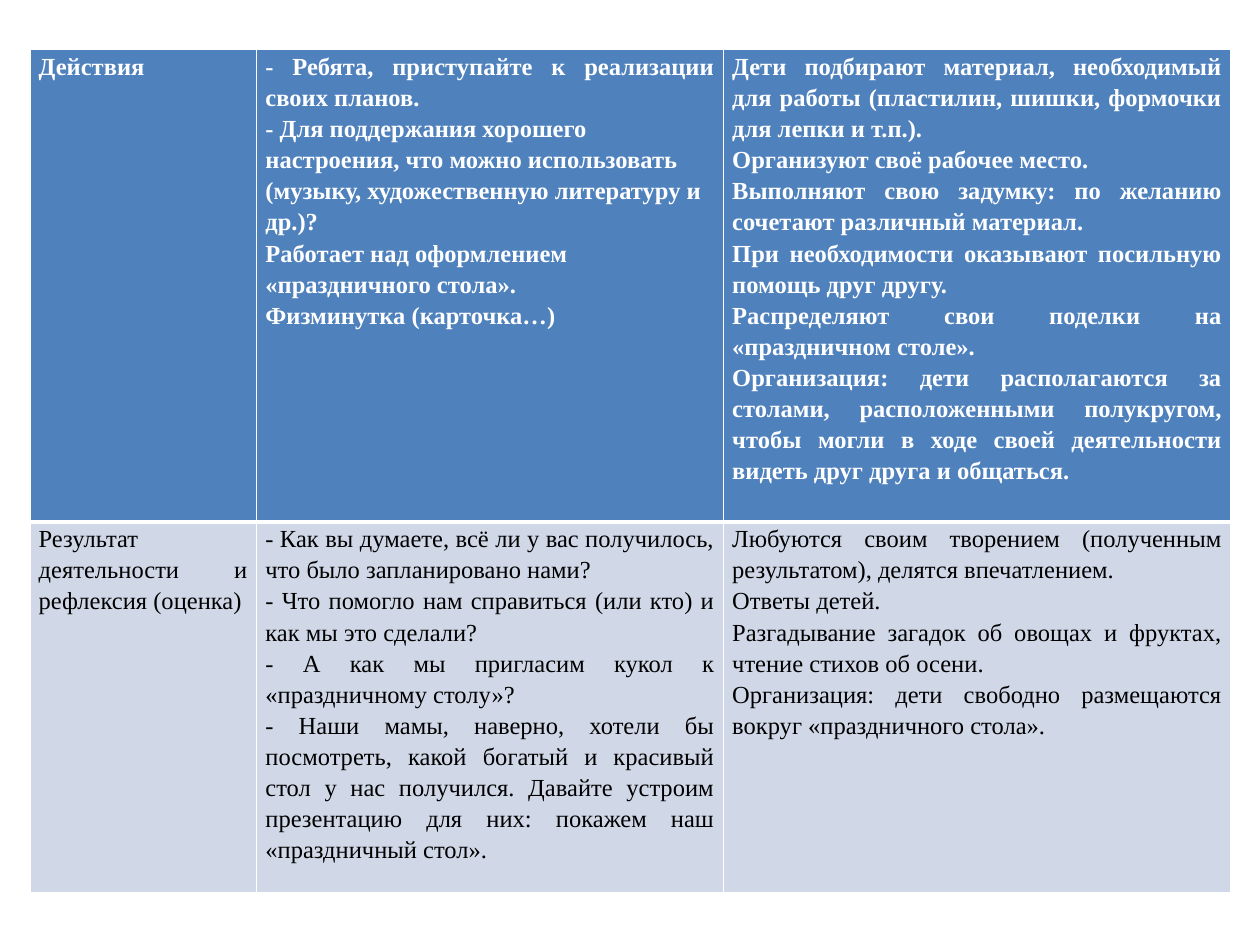
from dataclasses import dataclass

from lxml.etree import SubElement
from pptx import Presentation
from pptx.dml.color import RGBColor
from pptx.enum.text import PP_ALIGN
from pptx.oxml.ns import qn
from pptx.util import Cm, Pt


@dataclass(frozen=True)
class Theme:
    """Colours, type and line sizes of the page."""
    font: str = "Times New Roman"
    size: int = 14
    spacing: float = 1.15
    border: str = "FFFFFF"
    thin: int = 1
    thick: int = 3


@dataclass(frozen=True)
class RowStyle:
    """Look of one table row."""
    fill: str
    ink: str
    bold: bool
    bottom: int


@dataclass(frozen=True)
class CellText:
    """Justified paragraphs followed by left-aligned ones."""
    justified: tuple
    left: tuple = ()


THEME = Theme()
HEADER = RowStyle("4F81BD", "FFFFFF", True, THEME.thick)
BODY = RowStyle("D0D8E8", "000000", False, THEME.thin)
COLUMN_WIDTHS = (4.57, 9.41, 10.23)
ROW_HEIGHTS = (9.52, 7.48)

ACTIONS = (
    CellText(("Действия ",)),
    CellText(
        ("- Ребята, приступайте к реализации своих планов.",),
        (
            "- Для поддержания хорошего настроения, что можно использовать "
            "(музыку, художественную литературу и др.)?",
            "Работает над оформлением «праздничного стола».",
            "Физминутка (карточка…)",
        ),
    ),
    CellText((
        "Дети подбирают материал, необходимый для работы "
        "(пластилин, шишки, формочки для лепки и т.п.).",
        "Организуют своё рабочее место.",
        "Выполняют свою задумку: по желанию сочетают различный материал.",
        "При необходимости оказывают посильную помощь друг другу.",
        "Распределяют свои поделки на «праздничном столе».",
        "Организация: дети располагаются за столами, расположенными полукругом, "
        "чтобы могли в ходе своей деятельности видеть друг друга и общаться.",
    )),
)
RESULTS = (
    CellText(("Результат деятельности и рефлексия (оценка)",)),
    CellText((
        "- Как вы думаете, всё ли у вас получилось, что было запланировано нами?",
        "- Что помогло нам справиться (или кто) и как мы это сделали?",
        "- А как мы пригласим кукол к «праздничному столу»?",
        "- Наши мамы, наверно, хотели бы посмотреть, какой богатый и красивый "
        "стол у нас получился. Давайте устроим презентацию для них: "
        "покажем наш «праздничный стол».",
    )),
    CellText((
        "Любуются своим творением (полученным результатом), делятся впечатлением.",
        "Ответы детей.",
        "Разгадывание загадок об овощах и фруктах, чтение стихов об осени.",
        "Организация: дети свободно размещаются вокруг «праздничного стола».",
    )),
)


def draw_borders(cell, top, bottom):
    """Draw the four cell borders with the given top and bottom widths."""
    properties = cell._tc.get_or_add_tcPr()
    sides = (("L", THEME.thin), ("R", THEME.thin), ("T", top), ("B", bottom))
    for side, width in sides:
        line = SubElement(properties, qn(f"a:ln{side}"), w=str(Pt(width)))
        fill = SubElement(line, qn("a:solidFill"))
        SubElement(fill, qn("a:srgbClr"), val=THEME.border)


def write_cell(cell, content, style):
    """Write the paragraphs of a cell and format them."""
    cell.margin_left = cell.margin_right = Cm(0.18)
    cell.margin_top = cell.margin_bottom = 0
    cell.text_frame.text = "\n".join(content.justified + content.left)
    for index, para in enumerate(cell.text_frame.paragraphs):
        justified = index < len(content.justified)
        para.alignment = PP_ALIGN.JUSTIFY if justified else PP_ALIGN.LEFT
        para.line_spacing = THEME.spacing
        for span in para.runs:
            span.font.name = THEME.font
            span.font.size = Pt(THEME.size)
            span.font.bold = style.bold
            span.font.color.rgb = RGBColor.from_string(style.ink)


def add_lesson_table(page, left, top):
    """Place the lesson stage table with its corner at the given point."""
    rows = ((ACTIONS, HEADER), (RESULTS, BODY))
    table = page.shapes.add_table(
        len(rows), len(COLUMN_WIDTHS), left, top,
        Cm(sum(COLUMN_WIDTHS)), Cm(sum(ROW_HEIGHTS)),
    ).table
    for column, width in zip(table.columns, COLUMN_WIDTHS):
        column.width = Cm(width)
    top_border = THEME.thin
    for row, height, (contents, style) in zip(table.rows, ROW_HEIGHTS, rows):
        row.height = Cm(height)
        for cell, content in zip(row.cells, contents):
            draw_borders(cell, top_border, style.bottom)
            cell.fill.solid()
            cell.fill.fore_color.rgb = RGBColor.from_string(style.fill)
            write_cell(cell, content, style)
        top_border = style.bottom


def main():
    """Build the one-page deck."""
    deck = Presentation()
    deck.slide_width, deck.slide_height = Cm(25.4), Cm(19.05)
    page = deck.slides.add_slide(deck.slide_layouts[6])
    add_lesson_table(page, Cm(0.6), Cm(1))
    deck.save("out.pptx")


if __name__ == "__main__":
    main()
